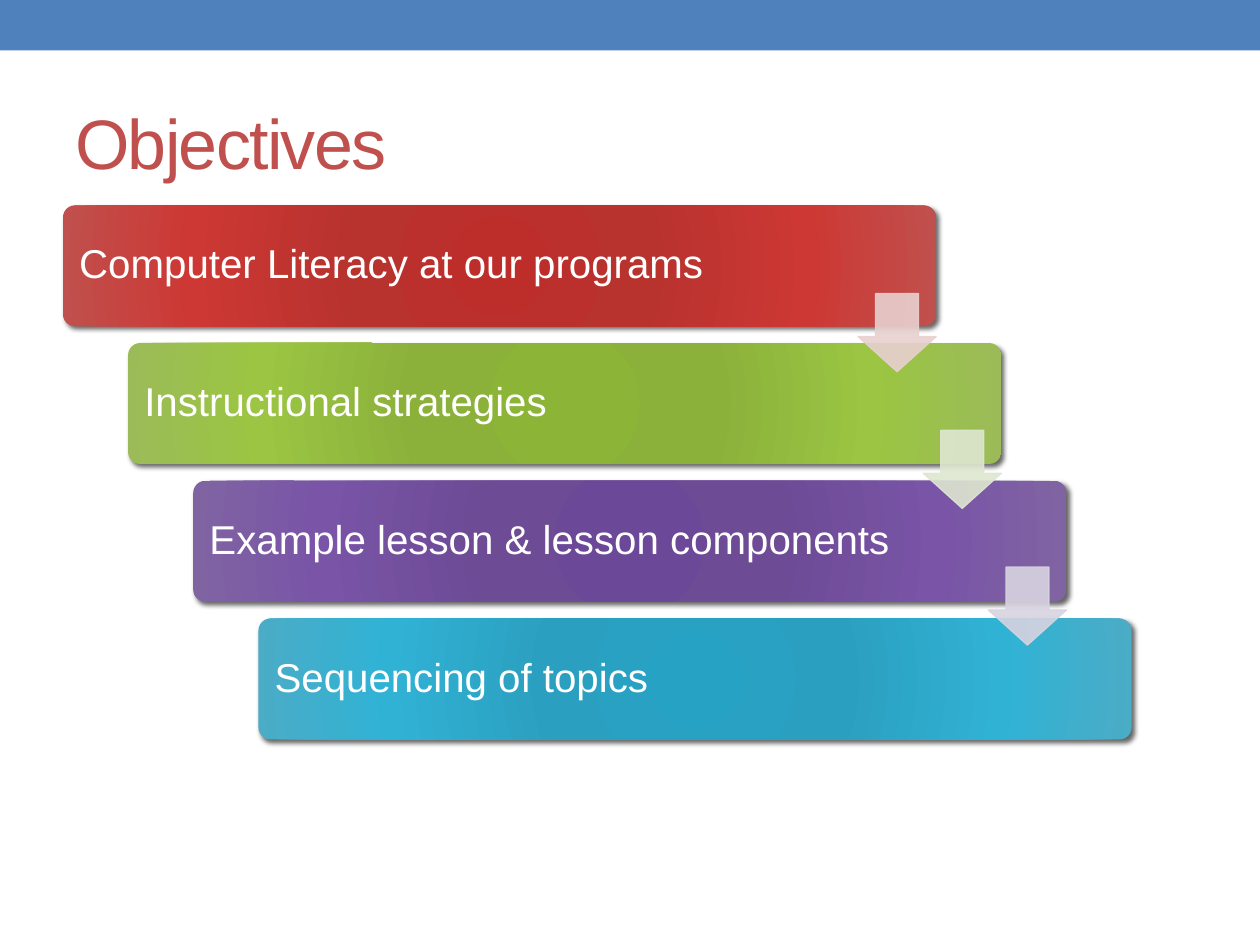
from dataclasses import dataclass

from lxml import etree
from pptx import Presentation
from pptx.dml.color import RGBColor
from pptx.enum.shapes import MSO_SHAPE as Shape
from pptx.enum.text import MSO_ANCHOR as Anchor
from pptx.oxml import parse_xml
from pptx.oxml.ns import nsdecls, qn
from pptx.util import Inches, Pt

BLUE = RGBColor(0x4F, 0x81, 0xBD)
RED = RGBColor(0xC0, 0x50, 0x4D)
WHITE = RGBColor(0xFF, 0xFF, 0xFF)
PINK = RGBColor(0xE8, 0xD0, 0xD0)
PALE_GREEN = RGBColor(0xDE, 0xE7, 0xD1)
PALE_PURPLE = RGBColor(0xD8, 0xD3, 0xE0)

FONT = "Arial"
STOPS = (0, 34, 70, 100)
LEFT, TOP, BAR_W, BAR_H = 0.5, 1.63, 6.93, 0.96
STEP_X, STEP_Y = 0.517, 1.093
ARROW = 0.62
ARROW_DX, ARROW_DY, ARROW_STEP_Y = 6.31, 0.7, 1.085


@dataclass
class Objective:
    text: str
    gradient: tuple[str, ...]
    text_w: float = 5.73
    arrow: RGBColor | None = None


OBJECTIVES = [
    Objective("Computer Literacy at our programs",
              ("BD2D29", "B8322E", "CD3834", "C0504D"), 5.78, PINK),
    Objective("Instructional strategies",
              ("8CB537", "8BB13B", "9BC542", "9BBB59"), arrow=PALE_GREEN),
    Objective("Example lesson & lesson components",
              ("6C4898", "6D4B95", "7954A7", "8064A2"), arrow=PALE_PURPLE),
    Objective("Sequencing of topics",
              ("26A2C4", "2B9FBF", "30B2D5", "4BACC6")),
]


def add_shape(s, kind: Shape, x: float, y: float, w: float, h: float):
    sp = s.shapes.add_shape(kind, Inches(x), Inches(y), Inches(w), Inches(h))
    sp.shadow.inherit = False
    sp.line.fill.background()
    return sp


def add_text(s, text: str, x: float, y: float, w: float, h: float,
             size: float, color: RGBColor, inset: float = 0.1):
    tf = s.shapes.add_textbox(Inches(x), Inches(y), Inches(w), Inches(h)).text_frame
    tf.word_wrap = True
    tf.vertical_anchor = Anchor.MIDDLE
    tf.margin_top = tf.margin_bottom = Inches(inset)
    p = tf.paragraphs[0]
    p.text = text
    p.font.name, p.font.size, p.font.color.rgb = FONT, Pt(size), color
    return p


def set_radial_fill(sp, colors: tuple[str, ...]) -> None:
    stops = "".join(f'<a:gs pos="{pos * 1000}"><a:srgbClr val="{color}"/></a:gs>'
                    for pos, color in zip(STOPS, colors))
    sp.fill.background()
    spPr = sp._element.spPr
    spPr.replace(spPr.find(qn("a:noFill")), parse_xml(
        f'<a:gradFill {nsdecls("a")} rotWithShape="1"><a:gsLst>{stops}</a:gsLst>'
        '<a:path path="circle"><a:fillToRect l="100000" t="100000" r="100000" b="100000"/>'
        '</a:path></a:gradFill>'))


def add_shadow(sp) -> None:
    sp._element.spPr.find(qn("a:effectLst")).append(parse_xml(
        f'<a:outerShdw {nsdecls("a")} blurRad="{Pt(3)}" dist="{Pt(2)}" dir="2700000" '
        'algn="tl" rotWithShape="0"><a:srgbClr val="000000"><a:alpha val="60000"/>'
        '</a:srgbClr></a:outerShdw>'))


def add_bar(s, i: int, item: Objective) -> None:
    x, y = LEFT + i * STEP_X, TOP + i * STEP_Y
    sp = add_shape(s, Shape.ROUNDED_RECTANGLE, x, y, BAR_W, BAR_H)
    sp.adjustments[0] = 0.1
    set_radial_fill(sp, item.gradient)
    add_shadow(sp)
    p = add_text(s, item.text, x + 0.03, y + 0.03, item.text_w, 0.9, 23, WHITE)
    p.line_spacing = 0.9


def add_arrow(s, i: int, color: RGBColor) -> None:
    sp = add_shape(s, Shape.DOWN_ARROW, LEFT + ARROW_DX + i * STEP_X,
                   TOP + ARROW_DY + i * ARROW_STEP_Y, ARROW, ARROW)
    sp.adjustments[0], sp.adjustments[1] = 0.55, 0.45
    sp.line.width = Pt(0.75)
    for fill in (sp.fill, sp.line.fill):
        fill.solid()
        fill.fore_color.rgb = color
    for clr in sp._element.spPr.iter(qn("a:srgbClr")):
        etree.SubElement(clr, qn("a:alpha")).set("val", "90000")


def main() -> None:
    prs = Presentation()
    prs.slide_width, prs.slide_height = Inches(10), Inches(7.5)
    s = prs.slides.add_slide(prs.slide_layouts[6])

    # Top band and title
    band = add_shape(s, Shape.RECTANGLE, 0, 0, 10, 0.4)
    band.fill.solid()
    band.fill.fore_color.rgb = BLUE
    title = add_text(s, "Objectives", 0.5, 0.58, 9, 1.08, 40, RED, 0.05)
    title.runs[0].font._element.set("spc", "-100")

    # Staircase of objectives, with the arrows on top
    for i, item in enumerate(OBJECTIVES):
        add_bar(s, i, item)
    for i, item in enumerate(OBJECTIVES):
        if item.arrow is not None:
            add_arrow(s, i, item.arrow)

    prs.save("out.pptx")


if __name__ == "__main__":
    main()
